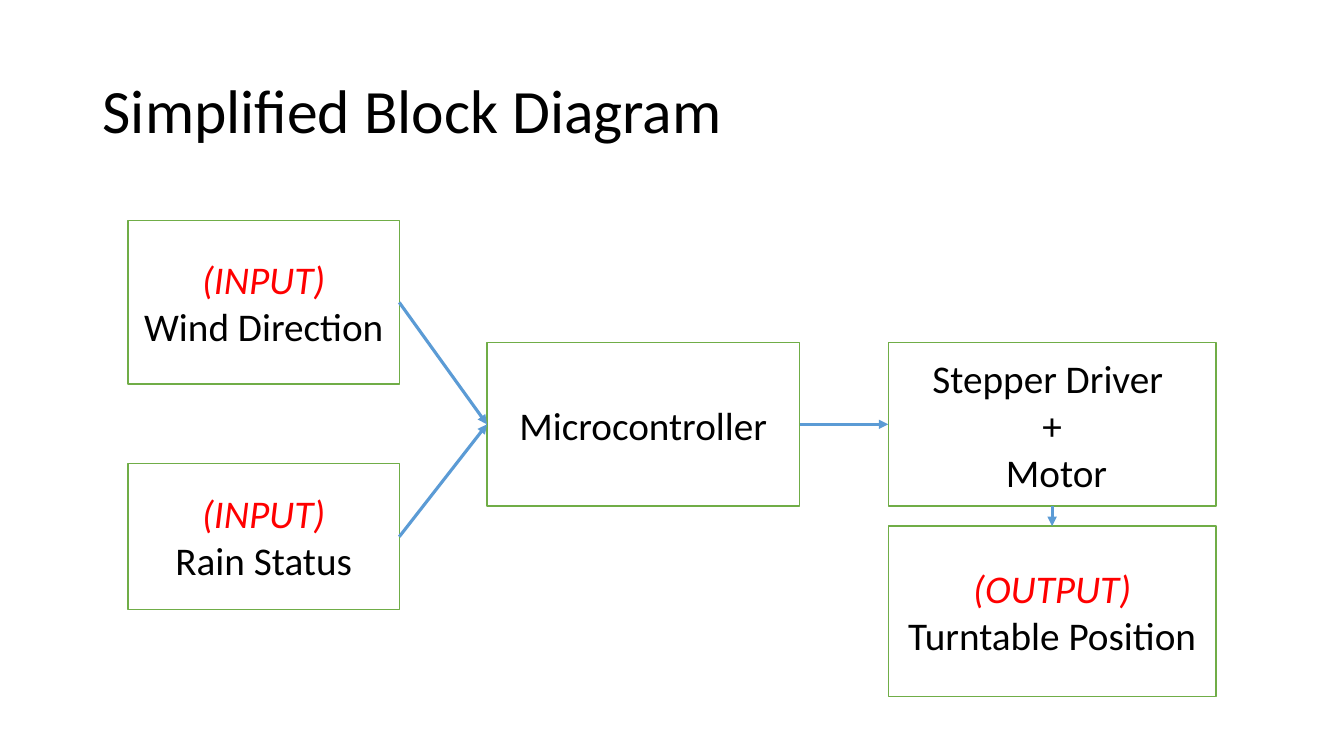
"""Builds the simplified block diagram slide."""
from lxml import etree
from pptx import Presentation
from pptx import util as u
from pptx.dml.color import RGBColor
from pptx.enum import shapes, text
from pptx.oxml.ns import qn

FONT = "Calibri"
BLACK, RED, WHITE, GREEN, BLUE = "000000", "FF0000", "FFFFFF", "70AD47", "5B9BD5"
TITLE = ("Simplified Block Diagram", (0.92, 0.4, 11.5, 1.45))
BLOCKS = {
    "wind": ((1.27, 2.19, 2.69, 1.62), [("(INPUT)", RED), ("Wind Direction", BLACK)]),
    "rain": ((1.27, 4.6, 2.69, 1.45), [("(INPUT)", RED), ("Rain Status", BLACK)]),
    "controller": ((4.83, 3.4, 3.1, 1.62), [("Microcontroller", BLACK)]),
    "motor": ((8.81, 3.4, 3.25, 1.62), [("Stepper Driver \v+\v Motor", BLACK)]),
    "turntable": ((8.81, 5.22, 3.25, 1.69), [("(OUTPUT)", RED), ("Turntable Position", BLACK)]),
}
TOP, LEFT, BOTTOM, RIGHT = range(4)
ARROWS = [
    ("wind", RIGHT, "controller", LEFT),
    ("rain", RIGHT, "controller", LEFT),
    ("controller", RIGHT, "motor", LEFT),
    ("motor", BOTTOM, "turntable", TOP),
]


def rgb(value):
    return RGBColor.from_string(value)


def write(sp, lines, size, align):
    tf = sp.text_frame
    tf.word_wrap = True
    tf.vertical_anchor = text.MSO_ANCHOR.MIDDLE
    for i, (line, color) in enumerate(lines):
        p = tf.add_paragraph() if i else tf.paragraphs[0]
        p.text = line
        p.alignment = align
        p.font.name = FONT
        p.font.size = u.Pt(size)
        p.font.italic = color == RED
        p.font.color.rgb = rgb(color)


def add_block(s, box, lines):
    sp = s.shapes.add_shape(shapes.MSO_SHAPE.RECTANGLE, *map(u.Inches, box))
    sp.shadow.inherit = False
    sp.fill.solid()
    sp.fill.fore_color.rgb = rgb(WHITE)
    sp.line.color.rgb = rgb(GREEN)
    sp.line.width = u.Pt(1)
    write(sp, lines, 28, text.PP_ALIGN.CENTER)
    return sp


def add_arrow(s, start, start_side, end, end_side):
    c = s.shapes.add_connector(shapes.MSO_CONNECTOR.STRAIGHT, 0, 0, 0, 0)
    c.begin_connect(start, start_side)
    c.end_connect(end, end_side)
    c.line.color.rgb = rgb(BLUE)
    c.line.width = u.Pt(2.25)
    etree.SubElement(c.line._get_or_add_ln(), qn("a:tailEnd"), type="triangle")
    etree.SubElement(c._element.spPr, qn("a:effectLst"))


def main():
    prs = Presentation()
    prs.slide_width, prs.slide_height = u.Inches(13.33), u.Inches(7.5)
    s = prs.slides.add_slide(prs.slide_layouts[6])

    title, box = TITLE
    sp = s.shapes.add_textbox(*map(u.Inches, box))
    write(sp, [(title, BLACK)], 44, text.PP_ALIGN.LEFT)
    sp.text_frame.paragraphs[0].line_spacing = 0.9

    blocks = {name: add_block(s, *block) for name, block in BLOCKS.items()}
    for start, start_side, end, end_side in ARROWS:
        add_arrow(s, blocks[start], start_side, blocks[end], end_side)
    prs.save("out.pptx")


if __name__ == "__main__":
    main()
